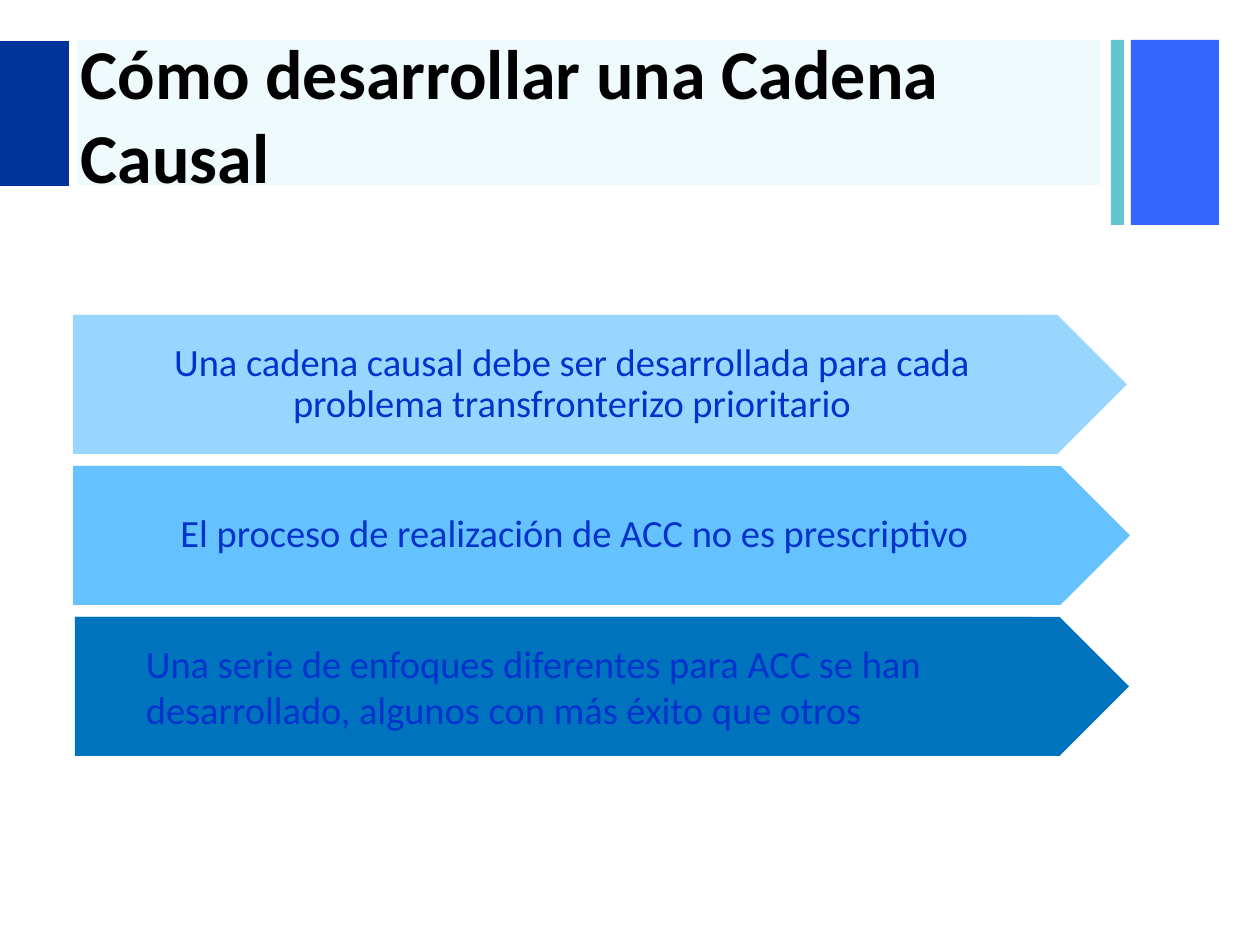
"""Build the slide on how to develop a causal chain."""
from lxml import etree
from pptx import Presentation, util as u
from pptx.dml.color import RGBColor
from pptx.enum import shapes, text
from pptx.oxml.ns import qn

PX = 914400 / 126
FONT = "Calibri"
COLOURS = {
    "accent": "3366FF", "stripe": "65C4D2", "band": "14C5D0", "edge": "003399",
    "title": "000000", "message": "0033CC",
    "light": "99D6FF", "medium": "66C2FF", "dark": "0073BF",
}
TITLE = "Cómo desarrollar una Cadena Causal"
DECORATION = [
    ("accent", (1131, 40, 88, 185), None),
    ("stripe", (1111, 40, 13, 185), None),
    ("band", (77, 40, 1023, 145), 7),
    ("edge", (0, 41, 69, 145), None),
]
CENTER, LEFT = text.PP_ALIGN.CENTER, text.PP_ALIGN.LEFT
MESSAGES = [
    ("Una cadena causal debe ser desarrollada para cada problema transfronterizo prioritario",
     "light", 73, 73, 945, CENTER, 0.9),
    ("El proceso de realización de ACC no es prescriptivo",
     "medium", 76, 73, 950, CENTER, 0.9),
    ("Una serie de enfoques diferentes para ACC se han desarrollado, algunos con más éxito que otros",
     "dark", 75, 75, 956, LEFT, 1.0),
]
ARROW_TOP, ARROW_PITCH, ARROW_WIDTH, ARROW_HEIGHT = 315, 151, 1054, 139


def emu(px):
    return u.Emu(round(px * PX))


def add_block(parent, preset, box, colour, opacity=None):
    block = parent.shapes.add_shape(preset, *map(emu, box))
    block.shadow.inherit = False
    block.fill.solid()
    block.fill.fore_color.rgb = RGBColor.from_string(COLOURS[colour])
    block.line.fill.background()
    if opacity is not None:
        rgb = block._element.spPr.find(qn("a:solidFill")).find(qn("a:srgbClr"))
        etree.SubElement(rgb, qn("a:alpha"), val=str(opacity * 1000))
    return block


def write(frame, words, size, colour, align, spacing=None, bold=False):
    frame.word_wrap = True
    frame.auto_size = text.MSO_AUTO_SIZE.NONE
    frame.vertical_anchor = text.MSO_ANCHOR.MIDDLE
    paragraph = frame.paragraphs[0]
    paragraph.alignment = align
    paragraph.line_spacing = spacing
    run = paragraph.add_run()
    run.text = words
    run.font.name, run.font.size, run.font.bold = FONT, u.Pt(size), bold
    run.font.color.rgb = RGBColor.from_string(COLOURS[colour])


def main():
    deck = Presentation()
    deck.slide_width, deck.slide_height = u.Inches(10), u.Inches(7.5)
    slide = deck.slides.add_slide(deck.slide_layouts[5])
    rect, arrow = shapes.MSO_SHAPE.RECTANGLE, shapes.MSO_SHAPE.PENTAGON

    for colour, box, opacity in DECORATION:
        add_block(slide, rect, box, colour, opacity)

    title = slide.shapes.title
    title.left, title.top, title.width, title.height = map(emu, (68, 43, 1042, 141))
    write(title.text_frame, TITLE, 40, "title", LEFT, bold=True)
    slide.shapes._spTree.append(title._element)

    for row, (words, colour, arrow_left, label_left, label_width, align, spacing) in enumerate(MESSAGES):
        top = ARROW_TOP + row * ARROW_PITCH
        group = slide.shapes.add_group_shape()
        add_block(group, arrow, (arrow_left, top, ARROW_WIDTH, ARROW_HEIGHT), colour)
        label = add_block(group, rect, (label_left, top, label_width, ARROW_HEIGHT), colour)
        frame = label.text_frame
        frame.margin_left, frame.margin_right = emu(71), emu(18)
        frame.margin_top = frame.margin_bottom = emu(9)
        write(frame, words, 22, "message", align, spacing)

    deck.save("out.pptx")


if __name__ == "__main__":
    main()
